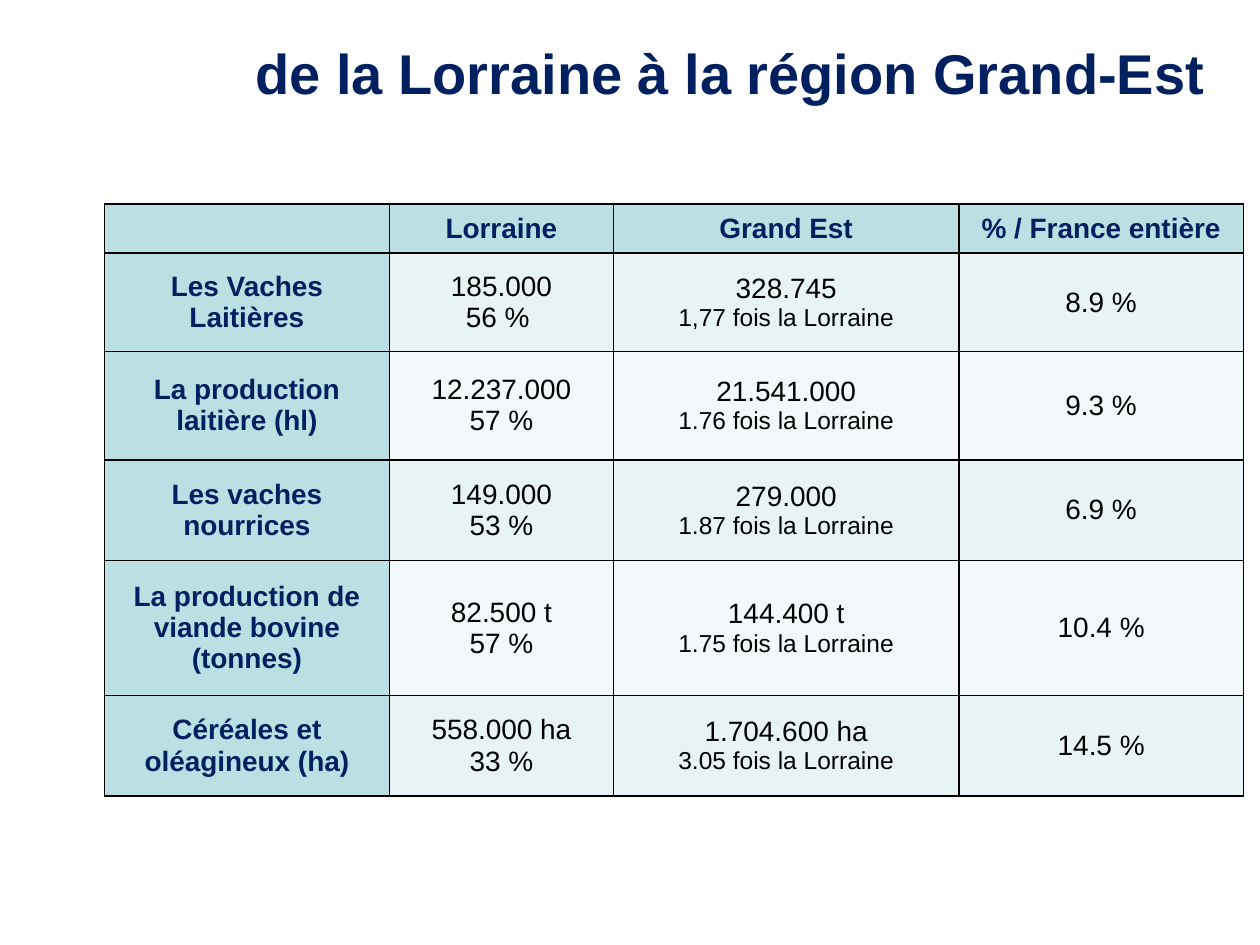
from typing import NamedTuple

from lxml import etree
from pptx import Presentation
from pptx.dml.color import RGBColor
from pptx.enum.text import MSO_ANCHOR, PP_ALIGN
from pptx.oxml.ns import qn
from pptx.util import Inches, Pt

CENTER = PP_ALIGN.CENTER
MIDDLE = MSO_ANCHOR.MIDDLE

NAVY = RGBColor(0x00, 0x20, 0x60)
BLACK = RGBColor(0x00, 0x00, 0x00)
TEAL = RGBColor(0xBB, 0xE0, 0xE3)
BANDS = (RGBColor(0xE7, 0xF3, 0xF4), RGBColor(0xF3, 0xF9, 0xFA))

FONT = "Arial"
COL_WIDTHS = (2.26, 1.78, 2.74, 2.26)
ROW_HEIGHTS = (0.39, 0.78, 0.86, 0.8, 1.07, 0.8)
HEADERS = ("", "Lorraine", "Grand Est", "% / France entière")


class Indicator(NamedTuple):
    label: str
    lorraine: str
    share: str
    grand_est: str
    ratio: str
    france: str


INDICATORS = (
    Indicator("Les Vaches Laitières", "185.000", "56 % ",
              "328.745", "1,77 fois la Lorraine", "8.9 %"),
    Indicator("La production laitière (hl)", "12.237.000", "57 %",
              "21.541.000", "1.76 fois la Lorraine", "9.3 %"),
    Indicator("Les vaches nourrices", "149.000", "53 %",
              "279.000", "1.87 fois la Lorraine", "6.9 %"),
    Indicator("La production de viande bovine (tonnes)", "82.500 t", "57 %",
              "144.400 t", "1.75 fois la Lorraine", "10.4 %"),
    Indicator("Céréales et oléagineux (ha)", "558.000 ha", "33 %",
              "1.704.600 ha", "3.05 fois la Lorraine", "14.5 %"),
)


def style(p, size: int, color: RGBColor, bold: bool) -> None:
    p.font.name = FONT
    p.font.size = Pt(size)
    p.font.bold = bold
    p.font.color.rgb = color


def add_borders(cell) -> None:
    """Draw a 1 pt black line on each side; lines must precede the fill."""
    tc_pr = cell._tc.get_or_add_tcPr()
    for i, side in enumerate(("lnL", "lnR", "lnT", "lnB")):
        line = etree.Element(qn(f"a:{side}"), w=str(Pt(1)))
        fill = etree.SubElement(line, qn("a:solidFill"))
        etree.SubElement(fill, qn("a:srgbClr"), val=str(BLACK))
        tc_pr.insert(i, line)


def fill_cell(cell, lines: tuple[str, ...], fill: RGBColor,
              color: RGBColor = BLACK, bold: bool = False,
              sizes: tuple[int, ...] = (16, 16)) -> None:
    cell.fill.solid()
    cell.fill.fore_color.rgb = fill
    add_borders(cell)
    cell.vertical_anchor = MIDDLE
    cell.margin_left = cell.margin_right = Inches(0.07)
    cell.margin_top = cell.margin_bottom = 0
    tf = cell.text_frame
    tf.text = "\n".join(lines)
    for p, size in zip(tf.paragraphs, sizes):
        p.alignment = CENTER
        style(p, size, color, bold)


def add_title(s, text: str) -> None:
    tf = s.shapes.add_textbox(Inches(1.93), Inches(0.26),
                              Inches(7.93), Inches(0.64)).text_frame
    tf.word_wrap = True
    tf.text = text
    style(tf.paragraphs[0], 32, NAVY, True)


def add_indicator_table(s) -> None:
    table = s.shapes.add_table(
        len(ROW_HEIGHTS), len(COL_WIDTHS), Inches(0.83), Inches(1.62),
        Inches(sum(COL_WIDTHS)), Inches(sum(ROW_HEIGHTS))).table
    for column, width in zip(table.columns, COL_WIDTHS):
        column.width = Inches(width)
    for row, height in zip(table.rows, ROW_HEIGHTS):
        row.height = Inches(height)

    for c, header in enumerate(HEADERS):
        fill_cell(table.cell(0, c), (header,), TEAL, NAVY, True)
    for r, item in enumerate(INDICATORS, start=1):
        band = BANDS[(r - 1) % 2]
        fill_cell(table.cell(r, 0), (item.label,), TEAL, NAVY, True)
        fill_cell(table.cell(r, 1), (item.lorraine, item.share), band)
        fill_cell(table.cell(r, 2), (item.grand_est, item.ratio), band,
                  sizes=(16, 14))
        fill_cell(table.cell(r, 3), (item.france,), band)


def main() -> None:
    prs = Presentation()
    prs.slide_width, prs.slide_height = Inches(10), Inches(7.5)
    s = prs.slides.add_slide(prs.slide_layouts[6])
    add_title(s, "de la Lorraine à la région Grand-Est")
    add_indicator_table(s)
    prs.save("out.pptx")


if __name__ == "__main__":
    main()
